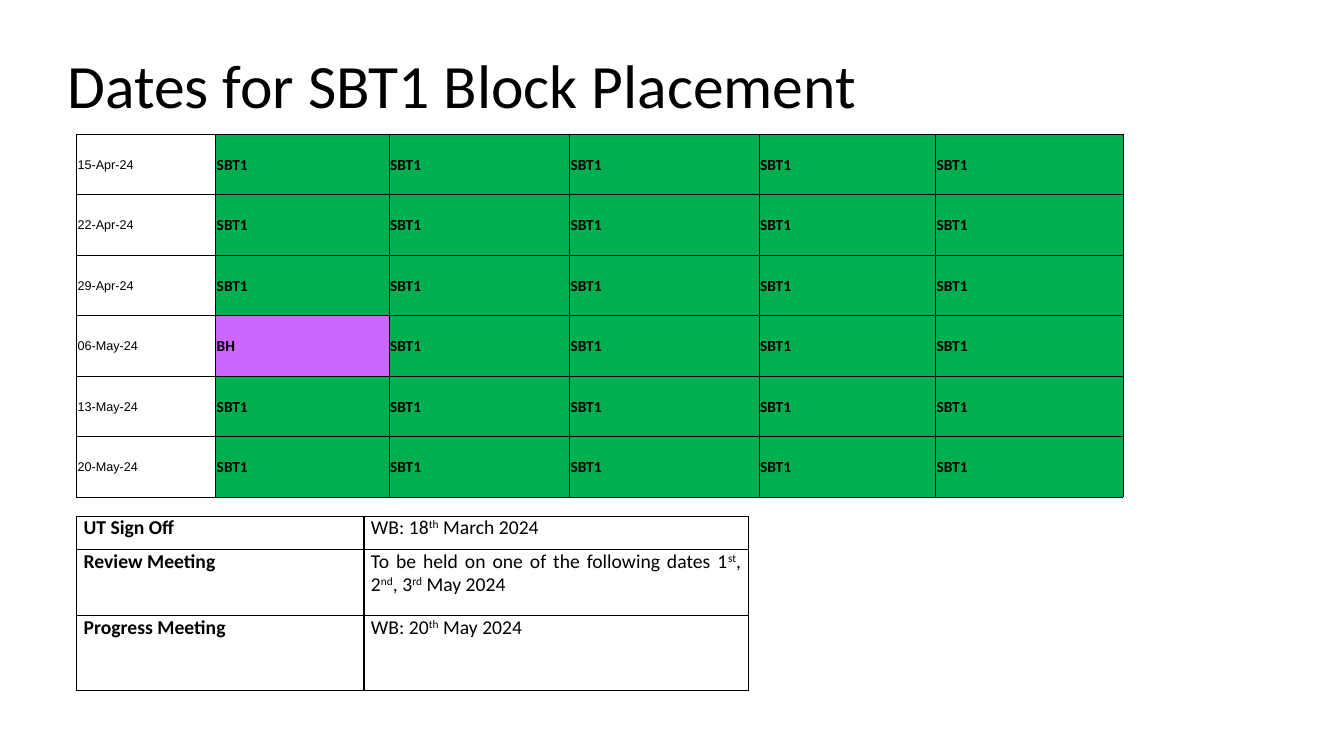
from dataclasses import dataclass
from typing import Optional

from lxml.etree import SubElement
from pptx import Presentation
from pptx.dml.color import RGBColor
from pptx.enum.text import MSO_ANCHOR, PP_ALIGN
from pptx.oxml.ns import qn
from pptx.slide import Slide
from pptx.table import _Cell
from pptx.util import Inches, Pt


@dataclass(frozen=True)
class Theme:
    """Colours, fonts and type sizes of the slide."""
    black: str = "000000"
    placement: str = "00B050"
    holiday: str = "CC66FF"
    body_font: str = "Calibri"
    date_font: str = "Arial"
    title_size: float = 44
    date_size: float = 9
    day_size: float = 11
    meeting_size: float = 14


THEME = Theme()


@dataclass(frozen=True)
class CellStyle:
    """Look of one kind of table cell."""
    size: float
    margins: tuple[float, float, float, float]
    border: float
    font: str = THEME.body_font
    bold: bool = False
    fill: Optional[str] = None
    anchor: MSO_ANCHOR = MSO_ANCHOR.TOP
    align: PP_ALIGN = PP_ALIGN.LEFT
    space_after: float = 0


@dataclass(frozen=True)
class CellContent:
    """Text of a cell, with superscripts between carets, and its style."""
    text: str
    style: CellStyle


@dataclass(frozen=True)
class TableSpec:
    """Place, grid and contents of a table."""
    left: float
    top: float
    columns: list[float]
    rows: list[float]
    cells: list[list[CellContent]]


def day_style(fill: Optional[str], **changes) -> CellStyle:
    """Return the style of a calendar cell."""
    settings = dict(size=THEME.day_size, bold=True) | changes
    return CellStyle(margins=(0.01, 0.01, 0.01, 0), border=0.5, fill=fill,
                     anchor=MSO_ANCHOR.MIDDLE, **settings)


def meeting_style(bold: bool = False, align: PP_ALIGN = PP_ALIGN.LEFT) -> CellStyle:
    """Return the style of a meeting cell."""
    return CellStyle(THEME.meeting_size, (0.07, 0, 0.07, 0), 1,
                     bold=bold, align=align, space_after=4)


DATE = day_style(None, size=THEME.date_size, font=THEME.date_font, bold=False)
PLACEMENT = CellContent("SBT1", day_style(THEME.placement))
HOLIDAY = CellContent("BH", day_style(THEME.holiday))
LABEL = meeting_style(bold=True)
DETAIL = meeting_style()
JUSTIFIED = meeting_style(align=PP_ALIGN.JUSTIFY)

WEEKS = ["15-Apr-24", "22-Apr-24", "29-Apr-24", "06-May-24", "13-May-24", "20-May-24"]
HOLIDAY_WEEK = "06-May-24"

CALENDAR = TableSpec(
    0.76, 1.33, [1.38, 1.72, 1.79, 1.88, 1.75, 1.86], [0.6] * len(WEEKS),
    [[CellContent(week, DATE), HOLIDAY if week == HOLIDAY_WEEK else PLACEMENT]
     + [PLACEMENT] * 4 for week in WEEKS])

MEETINGS = TableSpec(
    0.76, 5.12, [2.85, 3.81], [0.33, 0.66, 0.74],
    [[CellContent("UT Sign Off", LABEL),
      CellContent("WB: 18^th^ March 2024", DETAIL)],
     [CellContent("Review Meeting", LABEL),
      CellContent("To be held on one of the following dates 1^st^, 2^nd^, 3^rd^ May 2024",
                  JUSTIFIED)],
     [CellContent("Progress Meeting", LABEL),
      CellContent("WB: 20^th^ May 2024", JUSTIFIED)]])


def draw_borders(cell: _Cell, width: float) -> None:
    """Outline the four sides of a cell."""
    properties = cell._tc.get_or_add_tcPr()
    for side in ("a:lnL", "a:lnR", "a:lnT", "a:lnB"):
        line = SubElement(properties, qn(side), w=str(Pt(width)))
        SubElement(SubElement(line, qn("a:solidFill")), qn("a:srgbClr"), val=THEME.black)


def fill_cell(cell: _Cell, content: CellContent) -> None:
    """Write and format one cell."""
    style = content.style
    cell.margin_left, cell.margin_top, cell.margin_right, cell.margin_bottom = map(
        Inches, style.margins)
    cell.vertical_anchor = style.anchor
    draw_borders(cell, style.border)
    if style.fill:
        cell.fill.solid()
        cell.fill.fore_color.rgb = RGBColor.from_string(style.fill)
    else:
        cell.fill.background()
    paragraph = cell.text_frame.paragraphs[0]
    paragraph.alignment = style.align
    paragraph.space_after = Pt(style.space_after)
    for index, piece in enumerate(content.text.split("^")):
        run = paragraph.add_run()
        run.text = piece
        run.font.name = style.font
        run.font.size = Pt(style.size)
        run.font.bold = style.bold
        run.font.color.rgb = RGBColor.from_string(THEME.black)
        if index % 2:
            run.font._element.set("baseline", "30000")


def draw_table(slide: Slide, spec: TableSpec) -> None:
    """Add a table to the slide."""
    table = slide.shapes.add_table(
        len(spec.rows), len(spec.columns), Inches(spec.left), Inches(spec.top),
        Inches(sum(spec.columns)), Inches(sum(spec.rows))).table
    table.first_row = table.horz_banding = False
    for column, width in zip(table.columns, spec.columns):
        column.width = Inches(width)
    for row, height, contents in zip(table.rows, spec.rows, spec.cells):
        row.height = Inches(height)
        for cell, content in zip(row.cells, contents):
            fill_cell(cell, content)


def draw_title(slide: Slide, text: str) -> None:
    """Add the slide title."""
    shape = slide.shapes.add_textbox(Inches(0.57), Inches(0.18), Inches(11.26), Inches(1.39))
    shape.text_frame.word_wrap = True
    shape.text_frame.vertical_anchor = MSO_ANCHOR.MIDDLE
    shape.text_frame.text = text
    paragraph = shape.text_frame.paragraphs[0]
    paragraph.line_spacing = 0.9
    font = paragraph.runs[0].font
    font.name = THEME.body_font
    font.size = Pt(THEME.title_size)
    font.color.rgb = RGBColor.from_string(THEME.black)


def main() -> None:
    """Build and save the slide."""
    presentation = Presentation()
    presentation.slide_width = Inches(13.33)
    presentation.slide_height = Inches(7.5)
    slide = presentation.slides.add_slide(presentation.slide_layouts[6])
    draw_title(slide, "Dates for SBT1 Block Placement")
    for spec in (CALENDAR, MEETINGS):
        draw_table(slide, spec)
    presentation.save("out.pptx")


if __name__ == "__main__":
    main()
